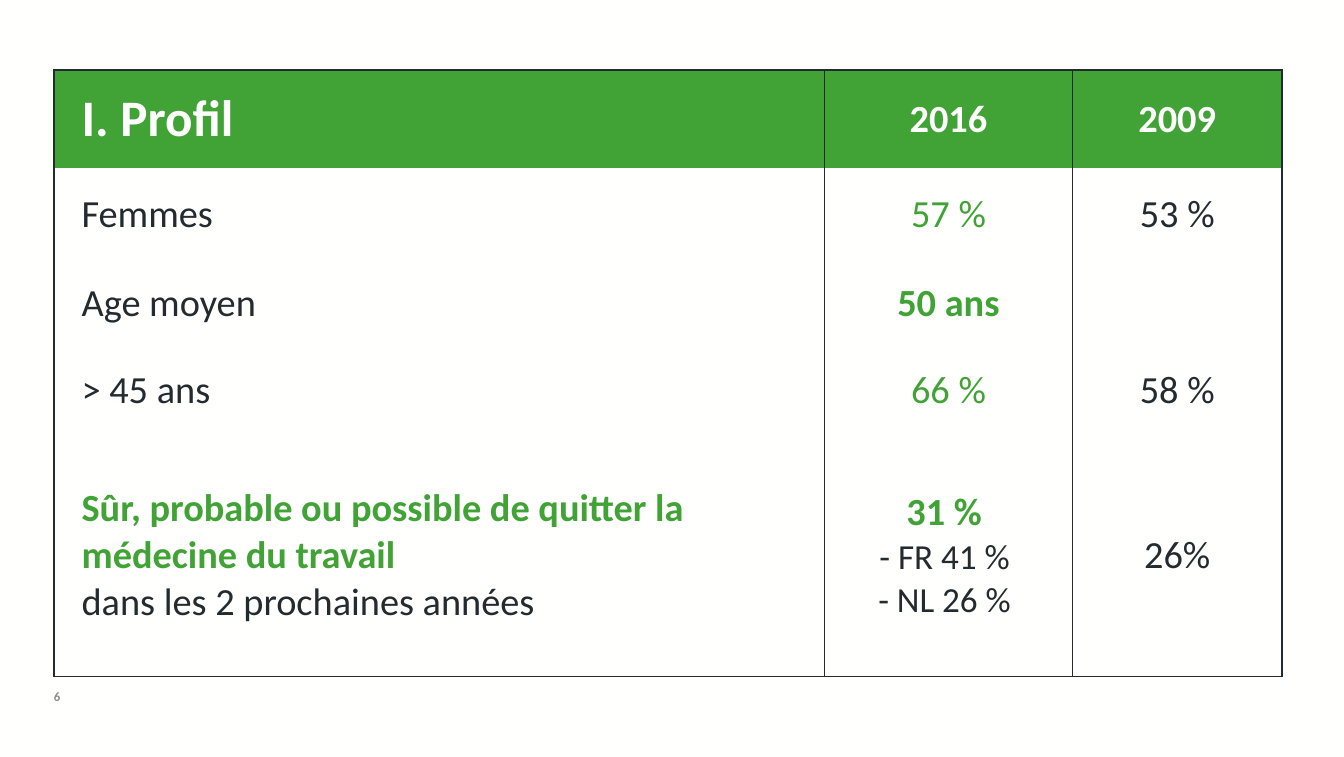
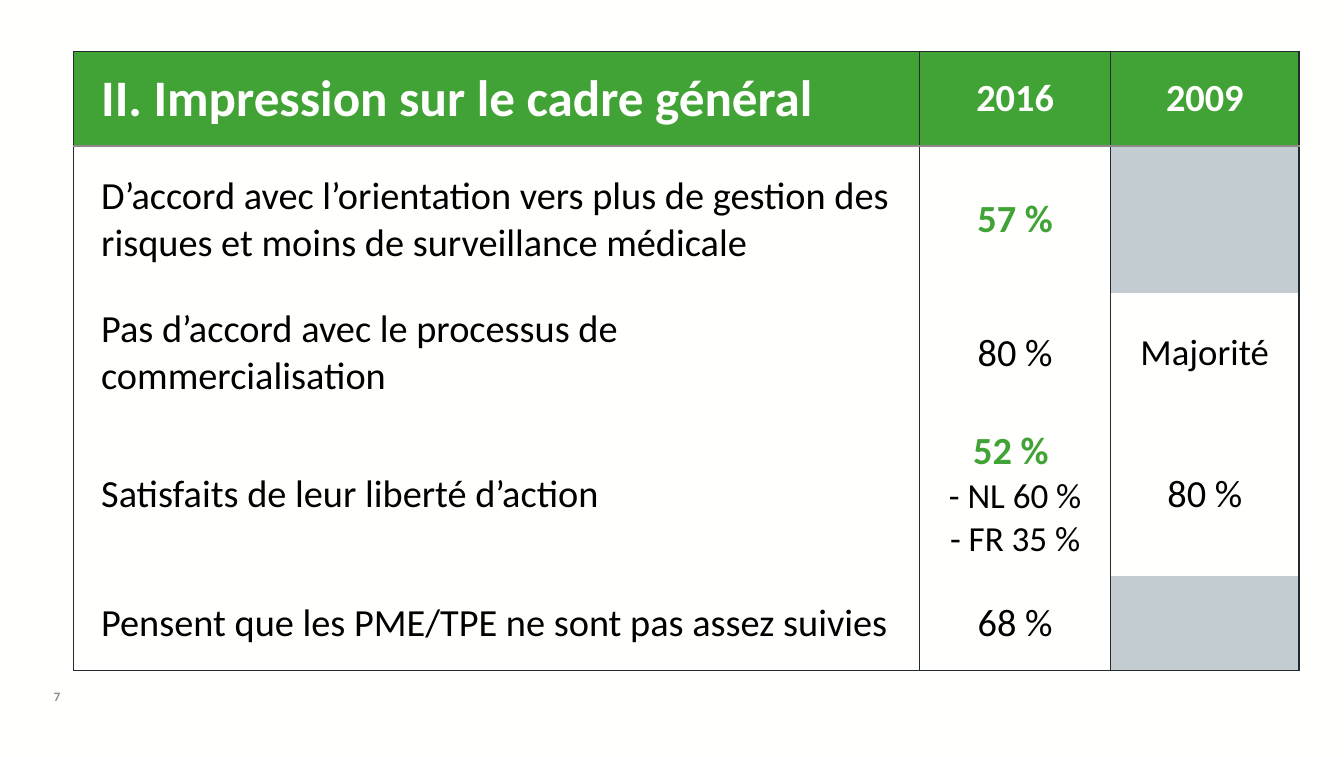
from dataclasses import dataclass

from lxml import etree
from pptx import Presentation
from pptx.dml.color import RGBColor
from pptx.enum.text import MSO_ANCHOR, PP_ALIGN
from pptx.oxml.ns import qn
from pptx.util import Inches, Pt

MIDDLE = MSO_ANCHOR.MIDDLE
LEFT, CENTER = PP_ALIGN.LEFT, PP_ALIGN.CENTER
BLANK_LAYOUT = 6
BORDER_SIDES = ("lnL", "lnR", "lnT", "lnB")


@dataclass(frozen=True)
class Theme:
    font: str = "Calibri"
    paper: str = "FFFFFE"
    green: str = "41A336"
    slate: str = "242B2F"
    black: str = "000000"
    grey: str = "8D8A8A"
    no_data: str = "C3CCD1"
    heading: int = 32
    body: int = 24
    word: int = 23
    detail: int = 22
    footer: int = 8
    border: int = 1
    pad_x: float = 0.24
    pad_y: float = 0.05
    margin: float = 0.47
    footer_top: float = 5.99


THEME = Theme()


@dataclass(frozen=True)
class Survey:
    page: str
    ink: str
    left: float
    top: float
    columns: tuple
    rows: tuple
    title: str
    answers: tuple
    header_rule: str | None = None


def run_style(role, ink):
    return {
        "heading": (THEME.heading, THEME.paper, True),
        "year": (THEME.body, THEME.paper, True),
        "plain": (THEME.body, ink, False),
        "accent": (THEME.body, THEME.green, False),
        "key": (THEME.body, THEME.green, True),
        "word": (THEME.word, ink, False),
        "detail": (THEME.detail, ink, False),
        "footer": (THEME.footer, THEME.grey, True),
    }[role]


def add_runs(paragraph, runs, ink):
    for role, text in runs:
        size, colour, bold = run_style(role, ink)
        for index, line in enumerate(text.split("\n")):
            if index:
                paragraph.add_line_break()
            if line:
                run = paragraph.add_run()
                run.text = line
                run.font.name = THEME.font
                run.font.size = Pt(size)
                run.font.bold = bold
                run.font.color.rgb = RGBColor.from_string(colour)


def fill_text(frame, paragraphs, ink, align=LEFT):
    for index, runs in enumerate(paragraphs):
        paragraph = frame.add_paragraph() if index else frame.paragraphs[0]
        paragraph.alignment = align
        add_runs(paragraph, runs, ink)


def set_borders(cell, colours):
    properties = cell._tc.get_or_add_tcPr()
    for position, (side, colour) in enumerate(zip(BORDER_SIDES, colours)):
        line = etree.Element(qn(f"a:{side}"), w=str(Pt(THEME.border)))
        if colour:
            fill = etree.SubElement(line, qn("a:solidFill"))
            etree.SubElement(fill, qn("a:srgbClr"), val=colour)
        else:
            etree.SubElement(line, qn("a:noFill"))
        properties.insert(position, line)


def set_fill(cell, colour):
    if colour:
        cell.fill.solid()
        cell.fill.fore_color.rgb = RGBColor.from_string(colour)
    else:
        cell.fill.background()


def format_cell(cell, survey, row, column, content):
    cell.margin_left = cell.margin_right = Inches(THEME.pad_x)
    cell.margin_top = cell.margin_bottom = Inches(THEME.pad_y)
    cell.vertical_anchor = MIDDLE
    no_data = content == "no data"
    set_fill(cell, THEME.green if row == 0 else THEME.no_data if no_data else None)
    last = len(survey.rows) - 1
    above = {0: THEME.slate, 1: survey.header_rule}.get(row)
    below = {0: survey.header_rule, last: THEME.slate}.get(row)
    set_borders(cell, (THEME.slate, THEME.slate, above, below))
    if content and not no_data:
        fill_text(cell.text_frame, content, survey.ink, CENTER if column else LEFT)


def add_survey_table(slide, survey):
    header = (one("heading", survey.title), one("year", "2016"), one("year", "2009"))
    grid = (header, *survey.answers)
    table = slide.shapes.add_table(
        len(survey.rows), len(survey.columns),
        Inches(survey.left), Inches(survey.top),
        Inches(sum(survey.columns)), Inches(sum(survey.rows)),
    ).table
    table.first_row = table.horz_banding = False
    for column, width in zip(table.columns, survey.columns):
        column.width = Inches(width)
    for row, height in zip(table.rows, survey.rows):
        row.height = Inches(height)
    for row, contents in enumerate(grid):
        for column, content in enumerate(contents):
            format_cell(table.cell(row, column), survey, row, column, content)


def add_page_number(slide, survey):
    box = slide.shapes.add_textbox(
        Inches(THEME.margin), Inches(THEME.footer_top), Inches(0.17), Inches(0.22))
    frame = box.text_frame
    frame.word_wrap = True
    frame.margin_left = frame.margin_right = frame.margin_top = frame.margin_bottom = 0
    fill_text(frame, one("footer", survey.page), survey.ink)


def one(role, text):
    return [[(role, text)]]


PROFILE = Survey(
    page="6", ink=THEME.slate, left=THEME.margin, top=0.61,
    columns=(6.7, 2.16, 1.82), rows=(0.85, 0.81, 0.74, 0.77, 2.1),
    title="I. Profil",
    answers=(
        (one("plain", "Femmes"), one("accent", "57 %"), one("plain", "53 %")),
        (one("plain", "Age moyen"), one("key", "50 ans"), None),
        (one("plain", "> 45 ans"), one("accent", "66 %"), one("plain", "58 %")),
        (
            [[("key", "Sûr, probable ou possible de quitter la médecine du travail \n"),
              ("plain", "dans les 2 prochaines années")]],
            [[("key", "31 % ")], [("detail", "- FR 41 % \n- NL 26 % ")]],
            one("plain", "26%"),
        ),
    ),
)

GENERAL_FRAMEWORK = Survey(
    page="7", ink=THEME.black, left=0.64, top=0.45,
    columns=(7.36, 1.66, 1.64), rows=(0.82, 1.28, 1.04, 1.42, 0.82),
    title="II. Impression sur le cadre général",
    header_rule=THEME.grey,
    answers=(
        (one("plain", "D’accord avec l’orientation vers plus de gestion des risques "
                      "et moins de surveillance médicale"),
         one("key", "57 %"), "no data"),
        (one("plain", "Pas d’accord avec le processus de commercialisation"),
         one("plain", "80 %"), one("word", "Majorité")),
        (one("plain", "Satisfaits de leur liberté d’action"),
         [[("key", "52 % ")], [("detail", "- NL 60 % - FR 35 %")]],
         one("plain", "80 %")),
        (one("plain", "Pensent que les PME/TPE ne sont pas assez suivies"),
         one("plain", "68 %"), "no data"),
    ),
)


def main():
    deck = Presentation()
    deck.slide_width, deck.slide_height = Inches(11.69), Inches(6.58)
    background = deck.slide_master.background.fill
    background.solid()
    background.fore_color.rgb = RGBColor.from_string(THEME.paper)
    for survey in (PROFILE, GENERAL_FRAMEWORK):
        slide = deck.slides.add_slide(deck.slide_layouts[BLANK_LAYOUT])
        add_page_number(slide, survey)
        add_survey_table(slide, survey)
    deck.save("out.pptx")


if __name__ == "__main__":
    main()
